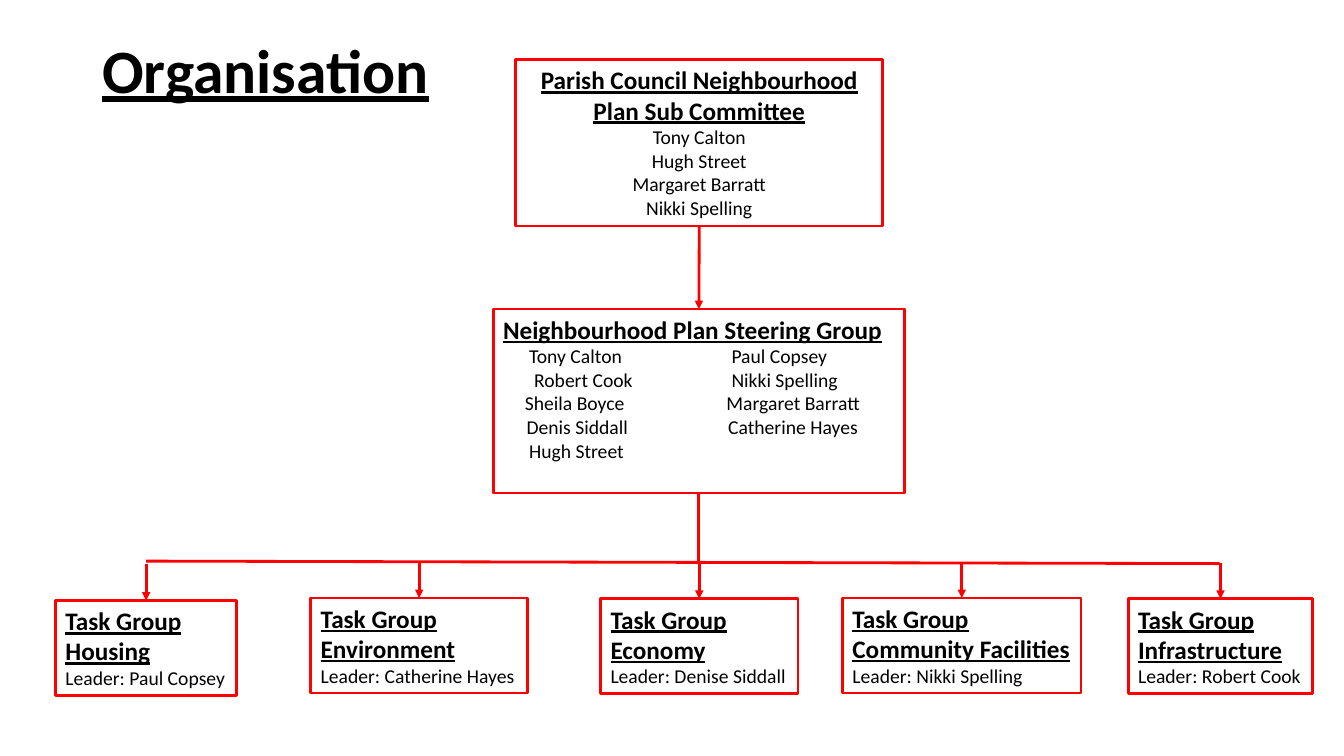
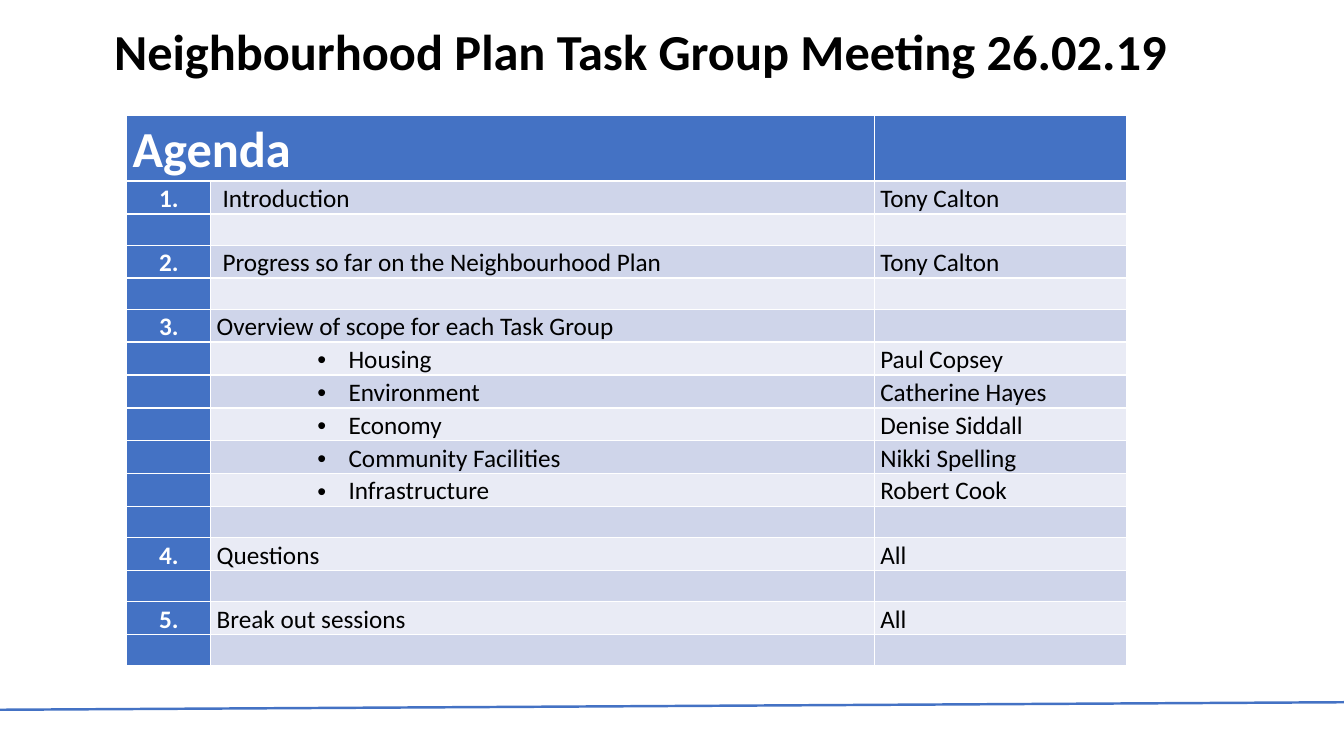
from lxml.etree import SubElement
from pptx import Presentation
from pptx.dml.color import RGBColor
from pptx.enum.shapes import MSO_CONNECTOR
from pptx.enum.text import MSO_ANCHOR as Anchor, PP_ALIGN as Align
from pptx.oxml.ns import qn
from pptx.util import Emu, Inches, Pt

COLORS = {"ink": "000000", "white": "FFFFFF", "red": "FF0000",
          "blue": "4472C4", "band_dark": "CFD5EA", "band_light": "E9EBF5"}
FONT = "Calibri"
COLUMNS, ROWS = 160, 90
TOP, BOTTOM = 0, 2
HEADING = {"size": 18, "bold": True, "underline": True}
NAME = {"size": 14}


class Builder:
    """Hold the deck style and the current page, and draw on a 160 by 90 grid."""

    def __init__(self):
        self.deck = Presentation()
        self.deck.slide_width, self.deck.slide_height = Inches(13.33), Inches(7.5)
        self.page = None

    def new_page(self):
        self.page = self.deck.slides.add_slide(self.deck.slide_layouts[6])

    def x(self, columns):
        return Emu(round(self.deck.slide_width * columns / COLUMNS))

    def y(self, rows):
        return Emu(round(self.deck.slide_height * rows / ROWS))

    def color(self, name):
        return RGBColor.from_string(COLORS[name])

    def span(self, para, text, size, bold=False, underline=False, color="ink"):
        span = para.add_run()
        span.text = text
        span.font.name, span.font.size = FONT, Pt(size)
        span.font.bold, span.font.underline = bold, underline
        span.font.color.rgb = self.color(color)

    def tabs(self, para, stops):
        tab_list = SubElement(para._p.get_or_add_pPr(), qn("a:tabLst"))
        for stop in stops:
            SubElement(tab_list, qn("a:tab"), pos=str(self.x(stop)), algn="l")

    def bullet(self, para, indent, hanging):
        props = para._p.get_or_add_pPr()
        props.set("marL", str(self.x(indent)))
        props.set("indent", str(-self.x(hanging)))
        SubElement(props, qn("a:buFont"), typeface="Arial")
        SubElement(props, qn("a:buChar"), char="•")

    def box(self, left, top, width, height, lines, align=Align.LEFT, border=None, wrap=True):
        box = self.page.shapes.add_textbox(self.x(left), self.y(top), self.x(width), self.y(height))
        box.text_frame.word_wrap = wrap
        if border:
            box.line.color.rgb, box.line.width = self.color(border), Pt(2)
        for index, (text, style, *stops) in enumerate(lines):
            para = box.text_frame.add_paragraph() if index else box.text_frame.paragraphs[0]
            if stops:
                self.tabs(para, stops)
            para.alignment = align
            self.span(para, text, **style)
        return box

    def title(self, left, top, width, height, text, **style):
        box = self.box(left, top, width, height, [(text, {"bold": True, **style})])
        box.text_frame.vertical_anchor = Anchor.MIDDLE
        box.text_frame.paragraphs[0].line_spacing = 0.9

    def line(self, start, end, color="red", width=2, arrow=False, join_start=None, join_end=None):
        line = self.page.shapes.add_connector(
            MSO_CONNECTOR.STRAIGHT, self.x(start[0]), self.y(start[1]), self.x(end[0]), self.y(end[1]))
        if join_start:
            line.begin_connect(join_start, BOTTOM)
        if join_end:
            line.end_connect(join_end, TOP)
        line.line.color.rgb, line.line.width = self.color(color), Pt(width)
        props = line._element.spPr
        if arrow:
            SubElement(props.find(qn("a:ln")), qn("a:tailEnd"), type="triangle")
        SubElement(props, qn("a:effectLst"))

    def table(self, left, top, widths, heights):
        table = self.page.shapes.add_table(
            len(heights), len(widths), self.x(left), self.y(top),
            self.x(sum(widths)), self.y(sum(heights))).table
        table.first_col = True
        for column, width in zip(table.columns, widths):
            column.width = self.x(width)
        for row, height in zip(table.rows, heights):
            row.height = self.y(height)
        return table

    def cell(self, cell, text, fill, inset=0.7, align=Align.LEFT, bulleted=False, **style):
        cell.fill.solid()
        cell.fill.fore_color.rgb = self.color(fill)
        cell.margin_left, cell.margin_right = self.x(inset), self.x(0.7)
        cell.margin_top = cell.margin_bottom = 0
        cell.vertical_anchor = Anchor.MIDDLE
        if text:
            para = cell.text_frame.paragraphs[0]
            if bulleted:
                self.bullet(para, 15.7, 3.7)
            para.alignment, para.line_spacing = align, 1.07
            self.span(para, text, **{"size": 18, **style})


COMMITTEE = ["Tony Calton", "Hugh Street", "Margaret Barratt", "Nikki Spelling"]
STEERING = [("\tTony Calton\tPaul Copsey", NAME, 3.1, 27.2),
            ("\tRobert Cook\tNikki Spelling", NAME, 3.7, 27.2),
            ("\tSheila Boyce\tMargaret Barratt", NAME, 2.6, 26.6),
            ("\tDenis Siddall\tCatherine Hayes", NAME, 2.8, 26.8),
            ("\tHugh Street", NAME, 3.1)]
TASK_GROUPS = [("Housing", "Paul Copsey", 6.6, 71.5, 21.6),
               ("Environment", "Catherine Hayes", 37, 71.2, 25.8),
               ("Economy", "Denise Siddall", 71.5, 71.3, 23.5),
               ("Community Facilities", "Nikki Spelling", 100.3, 71.2, 28.4),
               ("Infrastructure", "Robert Cook", 134.3, 71.3, 22)]
GAP = ("", "", "", 0.7)
AGENDA = [("1.", "Introduction", "Tony Calton", 1.4), GAP,
          ("2.", "Progress so far on the Neighbourhood Plan", "Tony Calton", 1.4), GAP,
          ("3.", "Overview of scope for each Task Group", "", 0.7),
          *[("", group, leader, 0.7) for group, leader, *_ in TASK_GROUPS], GAP,
          ("4.", "Questions", "All", 0.7), GAP,
          ("5.", "Break out sessions", "All", 0.7), GAP]


def organisation(build):
    build.new_page()
    build.title(11, 0, 138, 17.4, "Organisation", size=44, underline=True)
    committee = build.box(
        61.4, 7.1, 43.7, 19.8,
        [("Parish Council Neighbourhood Plan Sub Committee", HEADING),
         *[(name, NAME) for name in COMMITTEE]], Align.CENTER, "red")
    steering = build.box(
        58.7, 36.8, 49, 21.9,
        [("Neighbourhood Plan Steering Group", HEADING), *STEERING], border="red")
    build.line((83.2, 26.9), (83.2, 36.8), arrow=True, join_start=committee, join_end=steering)
    for group, leader, left, top, width in TASK_GROUPS:
        task = build.box(
            left, top, width, 11.3,
            [("Task Group", HEADING), (group, HEADING), (f"Leader: {leader}", NAME)],
            border="red", wrap=False)
        middle = left + width / 2
        build.line((middle, top - 4.3), (middle, top), arrow=True, join_end=task)
    build.line((83.2, 58.7), (83.2, 66.8), join_start=steering)
    build.line((17.4, 66.8), (145.2, 67.1))


def agenda(build):
    build.new_page()
    heights = [7.8] + [3.9 if topic else 3.7 for _, topic, *_ in AGENDA]
    table = build.table(15.1, 13.7, [10, 79, 30], heights)
    table.cell(0, 0).merge(table.cell(0, 1))
    for column, text in enumerate(["Agenda", "", ""]):
        build.cell(table.cell(0, column), text, "blue", size=36, bold=True, color="white")
    for row, (number, topic, speaker, inset) in enumerate(AGENDA, 1):
        band = "band_dark" if row % 2 else "band_light"
        build.cell(table.cell(row, 0), number, "blue", align=Align.CENTER, bold=True, color="white")
        build.cell(table.cell(row, 1), topic, band, inset, bulleted=not number)
        build.cell(table.cell(row, 2), speaker, band)
    build.line((0, 84.5), (COLUMNS, 83.6), "blue", 1.75)
    build.title(12.4, 2.2, 130.6, 8.5, "Neighbourhood Plan Task Group Meeting 26.02.19", size=36)


def main():
    build = Builder()
    organisation(build)
    agenda(build)
    build.deck.save("out.pptx")


if __name__ == "__main__":
    main()
